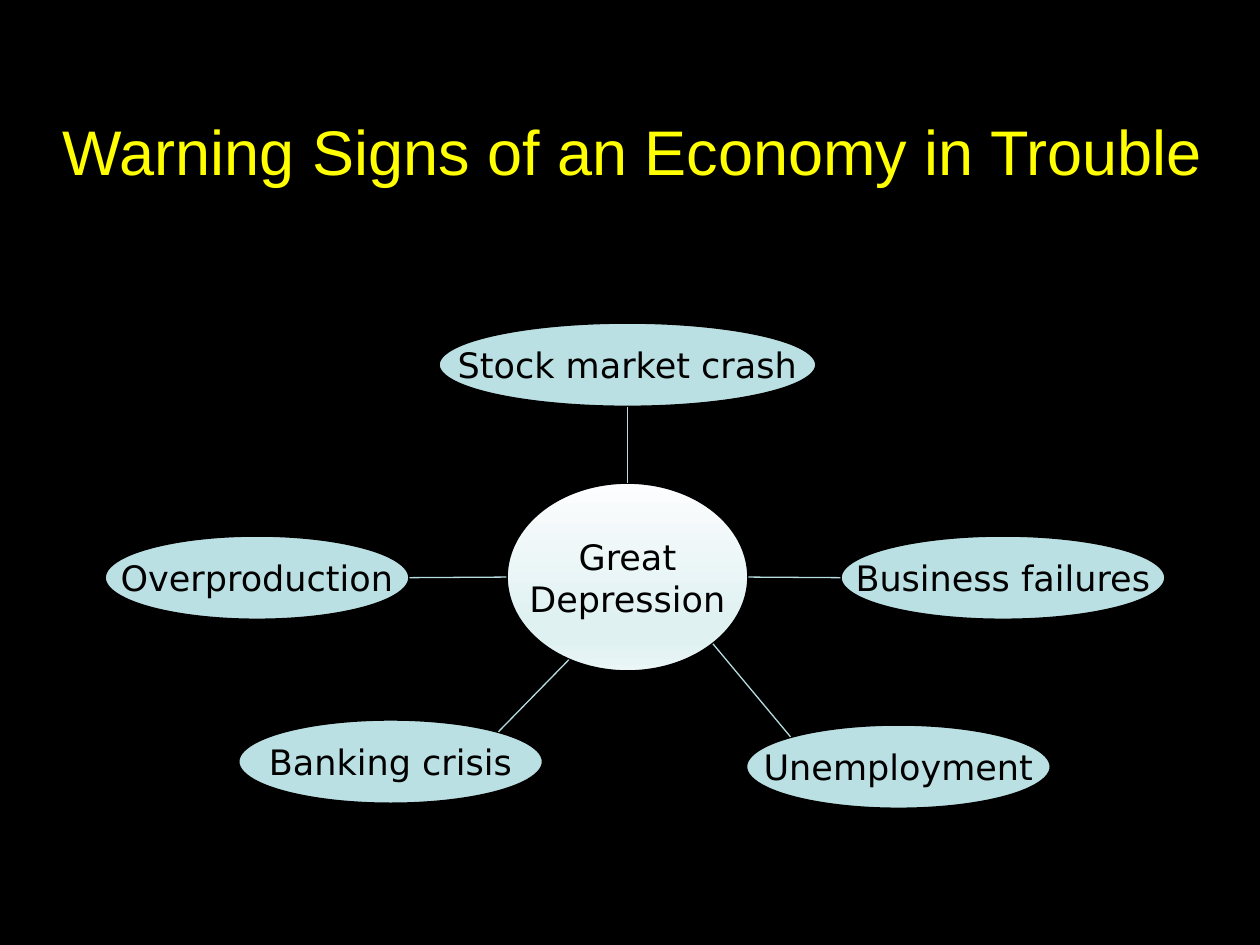
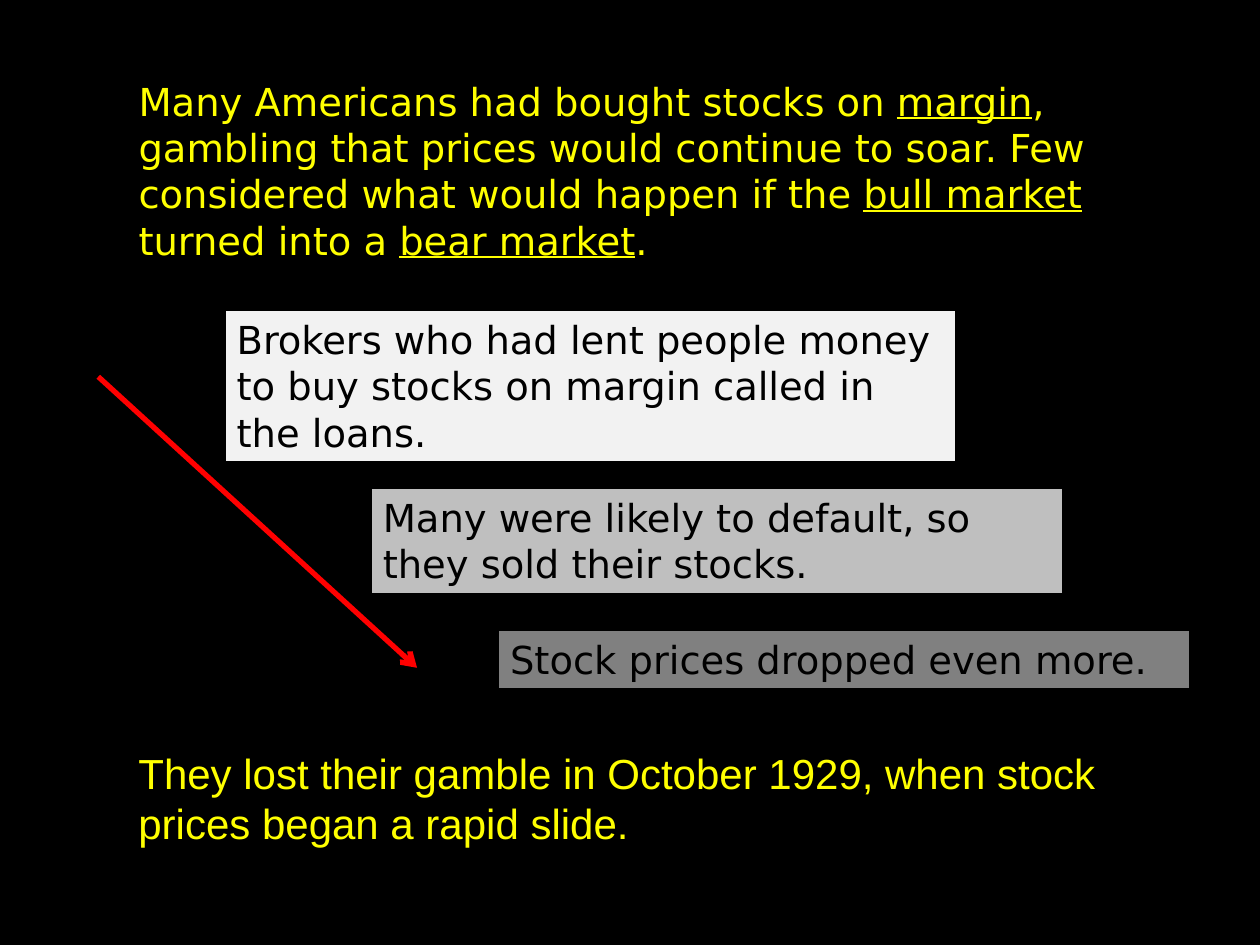
from dataclasses import dataclass
from math import cos, radians, sin

from lxml import etree
from pptx import Presentation
from pptx.dml.color import RGBColor
from pptx.enum.shapes import MSO_CONNECTOR, MSO_SHAPE
from pptx.enum.text import MSO_ANCHOR, MSO_AUTO_SIZE, PP_ALIGN
from pptx.oxml.ns import qn
from pptx.util import Inches, Pt

ELLIPSE, RECTANGLE = MSO_SHAPE.OVAL, MSO_SHAPE.RECTANGLE
STRAIGHT = MSO_CONNECTOR.STRAIGHT
TOP, MIDDLE = MSO_ANCHOR.TOP, MSO_ANCHOR.MIDDLE
LEFT, CENTER = PP_ALIGN.LEFT, PP_ALIGN.CENTER
NO_AUTOFIT = MSO_AUTO_SIZE.NONE
TITLE_ONLY = 5


@dataclass(frozen=True)
class Theme:
    background: str = "000000"
    heading: str = "FFFF00"
    ink: str = "000000"
    node: str = "BBE0E3"
    spoke: str = "B6DCDF"
    arrow: str = "FF0000"
    hub: tuple = ((0, "FCFDFE"), (74, "E0F1F2"), (83, "E0F1F2"), (100, "EBF6F7"))
    steps: tuple = ("F2F2F2", "BFBFBF", "808080")
    heading_font: str = "Arial"
    body_font: str = "DejaVu Sans"
    title_size: int = 36
    closing_size: int = 24
    body_size: int = 22
    node_size: int = 20
    outline: float = 1.5
    spoke_width: float = 0.75
    arrow_width: float = 3


THEME = Theme()


def color(value):
    return RGBColor.from_string(value)


def place(shape, box):
    shape.left, shape.top, shape.width, shape.height = map(Inches, box)


def write(shape, paragraphs, font, size, ink, align=LEFT, anchor=TOP, wrap=True):
    """Each paragraph is a list of (text, underlined) spans."""
    frame = shape.text_frame
    frame.auto_size = NO_AUTOFIT
    frame.word_wrap = wrap
    frame.vertical_anchor = anchor
    for index, spans in enumerate(paragraphs):
        para = frame.add_paragraph() if index else frame.paragraphs[0]
        para.alignment = align
        for text, underlined in spans:
            span = para.add_run()
            span.text = text
            span.font.name = font
            span.font.size = Pt(size)
            span.font.color.rgb = color(ink)
            if underlined:
                span.font.underline = True


def add_panel(page, kind, box, fill=None):
    panel = page.shapes.add_shape(kind, *map(Inches, box))
    panel.shadow.inherit = False
    panel.line.color.rgb = color(THEME.ink)
    panel.line.width = Pt(THEME.outline)
    if fill:
        panel.fill.solid()
        panel.fill.fore_color.rgb = color(fill)
    return panel


def add_line(page, start, end, ink, width):
    line = page.shapes.add_connector(STRAIGHT, *map(Inches, (*start, *end)))
    line.line.color.rgb = color(ink)
    line.line.width = Pt(width)
    etree.SubElement(line._element.spPr, qn("a:effectLst"))
    return line


def fill_gradient(shape, stops):
    shape.fill.gradient()
    shape.fill.gradient_angle = 270
    stop_list = shape._element.spPr.find(qn("a:gradFill")).find(qn("a:gsLst"))
    for old_stop in list(stop_list):
        stop_list.remove(old_stop)
    for percent, value in stops:
        stop = etree.SubElement(stop_list, qn("a:gs"), pos=str(percent * 1000))
        etree.SubElement(stop, qn("a:srgbClr"), val=value)


def rim_point(box, degrees):
    """Point on an ellipse, clockwise from its right end."""
    left, top, width, height = box
    angle = radians(degrees)
    return (left + width / 2 * (1 + cos(angle)),
            top + height / 2 * (1 + sin(angle)))


def add_node(page, box, lines, fill=None):
    node = add_panel(page, ELLIPSE, box, fill)
    write(node, [[(line, False)] for line in lines], THEME.body_font,
          THEME.node_size, THEME.ink, CENTER, MIDDLE, wrap=False)
    return node


def add_hub_diagram(page, box):
    left, top, _, _ = box
    hub_box = (left + 3.19, top + 1.27, 1.92, 1.5)
    hub = add_node(page, hub_box, ["Great", "Depression"])
    fill_gradient(hub, THEME.hub)

    # Label, offset, width, angle on the hub, angle on the node
    nodes = [
        ("Overproduction", 0, 1.69, 2.42, 180, 0),
        ("Banking crisis", 1.06, 3.15, 2.42, 119, -45),
        ("Business failures", 5.84, 1.69, 2.58, 0, 180),
        ("Unemployment", 5.09, 3.19, 2.42, 45, 225),
        ("Stock market crash", 2.65, 0, 3, 270, 90),
    ]
    for label, across, down, width, hub_angle, node_angle in nodes:
        node_box = (left + across, top + down, width, 0.67)
        add_node(page, node_box, [label], THEME.node)
        add_line(page, rim_point(node_box, node_angle),
                 rim_point(hub_box, hub_angle), THEME.spoke, THEME.spoke_width)


def add_step_cascade(page, box):
    left, top, _, _ = box
    # Text, offset and size of each step
    steps = [
        ("Brokers who had lent people money to buy stocks on margin called in the loans.",
         1, 0, 5.81, 1.21),
        ("Many were likely to default, so they sold their stocks.",
         2.16, 1.41, 5.5, 0.85),
        ("Stock prices dropped even more.", 3.17, 2.54, 5.5, 0.47),
    ]
    for (text, across, down, width, height), fill in zip(steps, THEME.steps):
        step = add_panel(page, RECTANGLE, (left + across, top + down, width, height), fill)
        write(step, [[(text, False)]], THEME.body_font, THEME.body_size, THEME.ink)

    # Downward arrow beside the steps
    arrow = add_line(page, (left, top + 0.53), (left + 2.53, top + 2.84),
                     THEME.arrow, THEME.arrow_width)
    etree.SubElement(arrow.line._get_or_add_ln(), qn("a:tailEnd"), type="arrow")


def add_page(deck, title_box, spans, font, size, align):
    page = deck.slides.add_slide(deck.slide_layouts[TITLE_ONLY])
    place(page.shapes.title, title_box)
    write(page.shapes.title, [spans], font, size, THEME.heading, align)
    return page


def build_warning_signs(deck):
    page = add_page(deck, (0.18, 0.84, 9.68, 1.25),
                    [("Warning Signs of an Economy in Trouble", False)],
                    THEME.heading_font, THEME.title_size, CENTER)
    add_hub_diagram(page, (0.83, 2.56, 8.42, 3.86))


def build_margin_buying(deck):
    spans = [
        ("Many Americans had bought stocks on ", False),
        ("margin", True),
        (", gambling that prices would continue to soar. Few considered "
         "what would happen if the ", False),
        ("bull market ", True),
        ("turned into a ", False),
        ("bear market", True),
        (".", False),
    ]
    page = add_page(deck, (1, 0.57, 8, 1.58), spans,
                    THEME.body_font, THEME.body_size, LEFT)
    add_step_cascade(page, (0.78, 2.46, 8.67, 3.01))

    # Closing statement
    closing = page.shapes.add_textbox(*map(Inches, (1, 5.88, 8.45, 0.91)))
    write(closing, [[("They lost their gamble in October 1929, when stock prices "
                      "began a rapid slide.", False)]],
          THEME.heading_font, THEME.closing_size, THEME.heading)


def main():
    deck = Presentation()
    deck.slide_width, deck.slide_height = Inches(10), Inches(7.5)
    background = deck.slide_master.background.fill
    background.solid()
    background.fore_color.rgb = color(THEME.background)
    build_warning_signs(deck)
    build_margin_buying(deck)
    deck.save("out.pptx")


if __name__ == "__main__":
    main()
